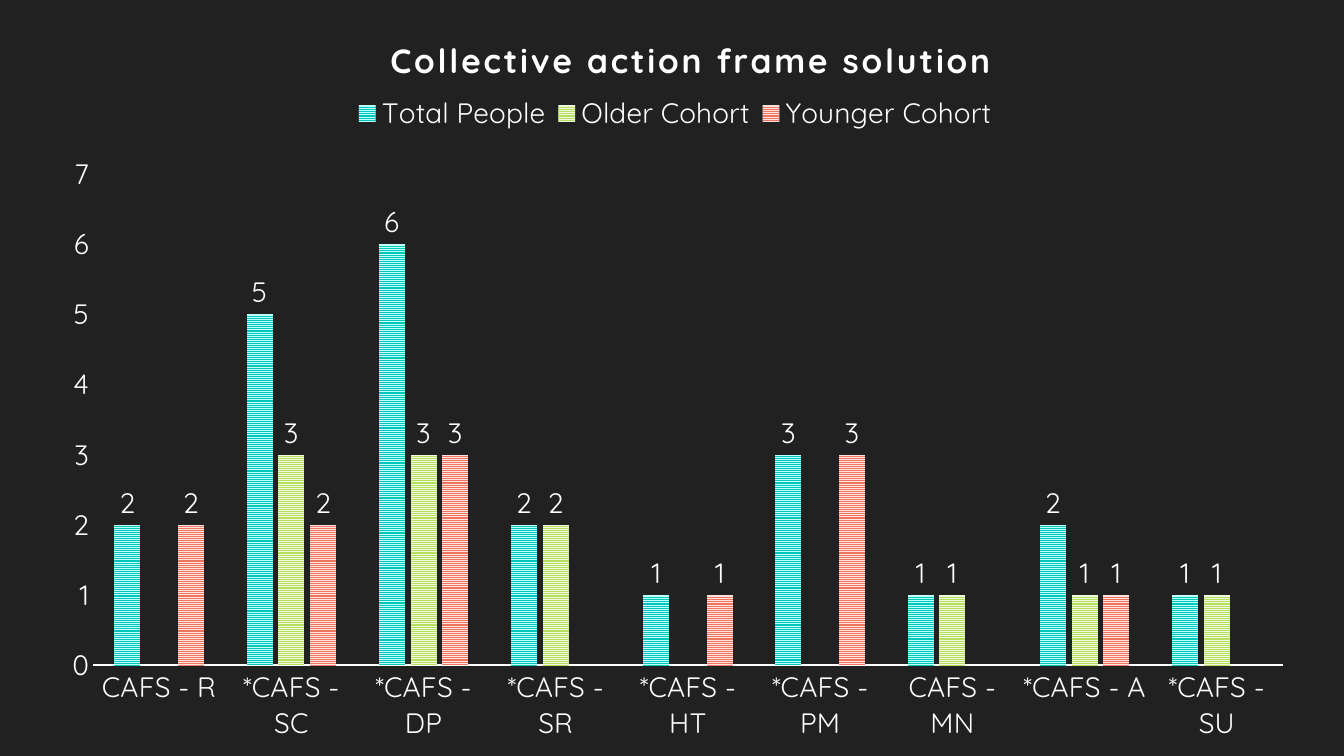
import pptx
import pptx.util
import pptx.chart.data
import pptx.dml.color
import pptx.enum.chart
import pptx.enum.dml
import lxml.etree as etree

# Content
TITLE = "Collective action frame solution"
CODES = ["CAFS - R", "*CAFS - SC", "*CAFS - DP", "*CAFS - SR", "*CAFS - HT",
         "*CAFS - PM", "CAFS - MN", "*CAFS - A", "*CAFS - SU"]
SERIES = [  # name, values, stripe colour, back colour
    ("Total People", [2, 5, 6, 2, 1, 3, 1, 2, 1], "00C6BB", "C1FFFC"),
    ("Older Cohort", [None, 3, 3, 2, None, None, 1, 1, 1], "B6DF5E", "F0F9DF"),
    ("Younger Cohort", [2, 2, 3, None, 1, 3, None, 1, None], "EF755F", "FCE3DF"),
]
FONT, WHITE, DARK = "Quicksand", "FFFFFF", "212121"
Cm, Pt = pptx.util.Cm, pptx.util.Pt
NS = "http://schemas.openxmlformats.org/drawingml/2006/chart"


def paint(color, code):
    color.rgb = pptx.dml.color.RGBColor.from_string(code)


def style(font, size=20, bold=False):
    font.name, font.size, font.bold = FONT, Pt(size), bold
    paint(font.color, WHITE)


def place(chart, tag, index, **spots):
    """Give a chart part a fixed layout, in fractions of the chart."""
    part = chart.element.xpath(f".//c:{tag}")[0]
    for old in part.findall(f"{{{NS}}}layout"):
        part.remove(old)
    layout = etree.Element(f"{{{NS}}}layout")
    part.insert(index, layout)
    manual = etree.SubElement(layout, f"{{{NS}}}manualLayout")
    if tag == "plotArea":
        etree.SubElement(manual, f"{{{NS}}}layoutTarget").set("val", "inner")
    for key in ("x", "y"):
        etree.SubElement(manual, f"{{{NS}}}{key}Mode").set("val", "edge")
    for key, value in spots.items():
        etree.SubElement(manual, f"{{{NS}}}{key}").set("val", str(value))


# Slide
deck = pptx.Presentation()
deck.slide_width, deck.slide_height = Cm(33.87), Cm(19.05)
slide = deck.slides.add_slide(deck.slide_layouts[6])
back = slide.background.fill
back.solid()
paint(back.fore_color, DARK)

# Chart
data = pptx.chart.data.CategoryChartData()
data.categories = CODES
for name, values, *_ in SERIES:
    data.add_series(name, values)
kinds = pptx.enum.chart
chart = slide.shapes.add_chart(kinds.XL_CHART_TYPE.COLUMN_CLUSTERED, Cm(1.07), 0,
                               Cm(31.9), Cm(19.05), data).chart
style(chart.font)

# Title and legend
frame = chart.chart_title.text_frame
frame.text = TITLE
style(frame.paragraphs[0].runs[0].font, 24, True)
chart.element.xpath(".//c:title//a:r/a:rPr")[0].set("spc", "200")
chart.has_legend = True
chart.legend.position = kinds.XL_LEGEND_POSITION.TOP
chart.legend.include_in_layout = False
style(chart.legend.font)

# Axes
across, up = chart.category_axis, chart.value_axis
for axis in (across, up):
    axis.has_major_gridlines = False
    axis.major_tick_mark = axis.minor_tick_mark = kinds.XL_TICK_MARK.NONE
    style(axis.tick_labels.font)
paint(across.format.line.color, WHITE)
across.format.line.width = Pt(1.5)
up.format.line.fill.background()
up.minimum_scale, up.maximum_scale, up.major_unit = 0, 7, 1

# Bars
plot = chart.plots[0]
plot.gap_width, plot.overlap, plot.vary_by_categories = 164, -22, False
for bars, (_, _, front, rear) in zip(plot.series, SERIES):
    bars.invert_if_negative = False
    fill = bars.format.fill
    fill.patterned()
    fill.pattern = pptx.enum.dml.MSO_PATTERN.NARROW_HORIZONTAL
    paint(fill.fore_color, front)
    paint(fill.back_color, rear)
    labels = bars.data_labels
    labels.show_value = True
    labels.position = kinds.XL_LABEL_POSITION.OUTSIDE_END
    style(labels.font)

# Layout
place(chart, "title", 1, x=0.27, y=0.04)
place(chart, "legend", 1, x=0.24, y=0.12, w=0.52, h=0.06)
place(chart, "plotArea", 0, x=0.04, y=0.23, w=0.94, h=0.65)

deck.save("out.pptx")
